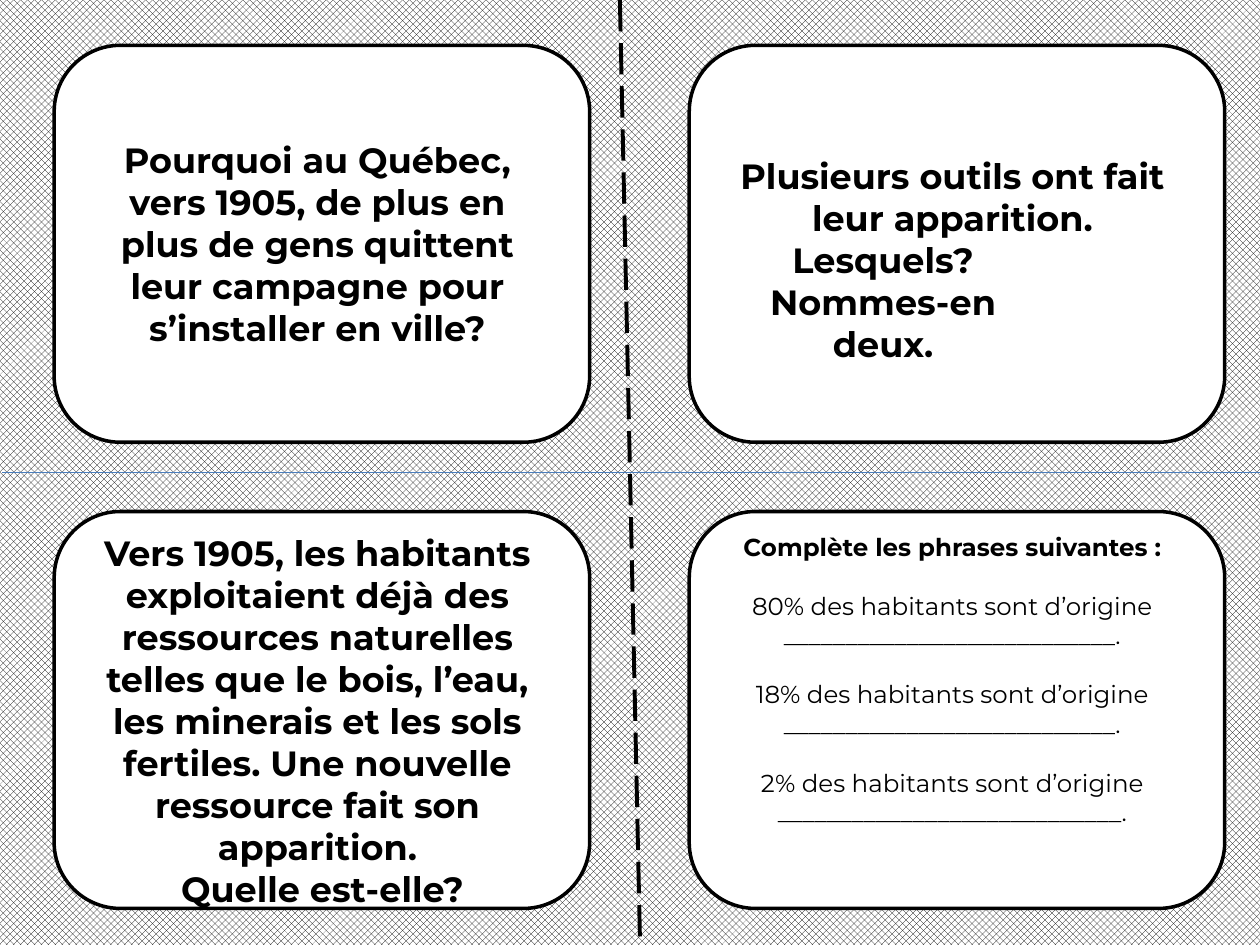
import pptx
import pptx.dml.color
import pptx.enum.dml
import pptx.enum.shapes
import pptx.enum.text
import pptx.oxml
import pptx.oxml.ns
import pptx.util
from pptx.util import Inches

COLORS = {"black": "000000", "white": "FFFFFF", "blue": "4B7EBC"}
FONT = "Montserrat"


def rgb(name):
    return pptx.dml.color.RGBColor.from_string(COLORS[name])


prs = pptx.Presentation()
prs.slide_width, prs.slide_height = Inches(10), Inches(7.5)
s = prs.slides.add_slide(prs.slide_layouts[6])

# Hatched background
bg = s.background.fill
bg.patterned()
bg.pattern = pptx.enum.dml.MSO_PATTERN.SOLID_DIAMOND
bg.fore_color.rgb = rgb("black")
bg.back_color.rgb = rgb("white")

# Cutting lines: x1, y1, x2, y2, colour, width, dash
DASH = pptx.enum.dml.MSO_LINE.LONG_DASH
for x1, y1, x2, y2, color, width, dash in [
    (4.92, 0, 5.08, 7.5, "black", 2.25, DASH),
    (0.02, 3.75, 10.22, 3.75, "blue", 0.75, None),
]:
    line = s.shapes.add_connector(
        pptx.enum.shapes.MSO_CONNECTOR.STRAIGHT,
        Inches(x1), Inches(y1), Inches(x2), Inches(y2))
    line.line.color.rgb = rgb(color)
    line.line.width = pptx.util.Pt(width)
    if dash:
        line.line.dash_style = dash
    pptx.oxml.ns.qn("a:effectLst")
    line._element.spPr.append(pptx.oxml.parse_xml(
        '<a:effectLst xmlns:a="http://schemas.openxmlformats.org/drawingml/2006/main"/>'))

# Four cards on a 2 x 2 grid
for top in (0.36, 4.06):
    for left in (0.43, 5.47):
        sp = s.shapes.add_shape(
            pptx.enum.shapes.MSO_SHAPE.ROUNDED_RECTANGLE,
            Inches(left), Inches(top), Inches(4.25), Inches(3.15))
        sp.shadow.inherit = False
        sp.fill.solid()
        sp.fill.fore_color.rgb = rgb("white")
        sp.line.color.rgb = rgb("black")
        sp.line.width = pptx.util.Pt(2)

# Questions: box, font size, paragraphs (text, bold, space before, indents)
BLANK = "_" * 27
questions = [
    ((0.67, 1.05, 3.7, 1.78), 20, [
        ("Pourquoi au Québec, vers 1905, de plus en plus de gens quittent "
         "leur campagne pour s’installer en ville?", True, 0, {}),
    ]),
    ((0.51, 4.17, 4.02, 3.13), 20, [
        ("Vers 1905, les habitants exploitaient déjà des ressources naturelles "
         "telles que le bois, l’eau, les minerais et les sols fertiles. "
         "Une nouvelle ressource fait son apparition.", True, 0, {}),
        ("Quelle est-elle?", True, 0, {"marL": 0.08}),
    ]),
    ((5.71, 1.18, 3.7, 1.78), 20, [
        ("Plusieurs outils ont fait leur apparition.", True, 0, {}),
        ("Lesquels?", True, 0, {"marR": 1.1}),
        ("Nommes-en deux.", True, 0, {}),
    ]),
    ((5.71, 4.17, 3.7, 2.69), 14, [
        ("Complète les phrases suivantes :", True, 0, {}),
        (f"80% des habitants sont d’origine {BLANK}.", False, 17, {}),
        (f"18% des habitants sont d’origine {BLANK}.", False, 17, {}),
        (f"2% des habitants sont d’origine {BLANK}_.", False, 17, {}),
    ]),
]
for box, size, paragraphs in questions:
    tf = s.shapes.add_textbox(*map(Inches, box)).text_frame
    tf.word_wrap = True
    for i, (text, bold, space, indents) in enumerate(paragraphs):
        p = tf.add_paragraph() if i else tf.paragraphs[0]
        p.text = text
        p.alignment = pptx.enum.text.PP_ALIGN.CENTER
        p.space_before = pptx.util.Pt(space)
        p.font.name = FONT
        p.font.size = pptx.util.Pt(size)
        p.font.bold = bold
        p.font.color.rgb = rgb("black")
        for side, inches in indents.items():
            p._p.get_or_add_pPr().set(side, str(Inches(inches)))

prs.save("out.pptx")
